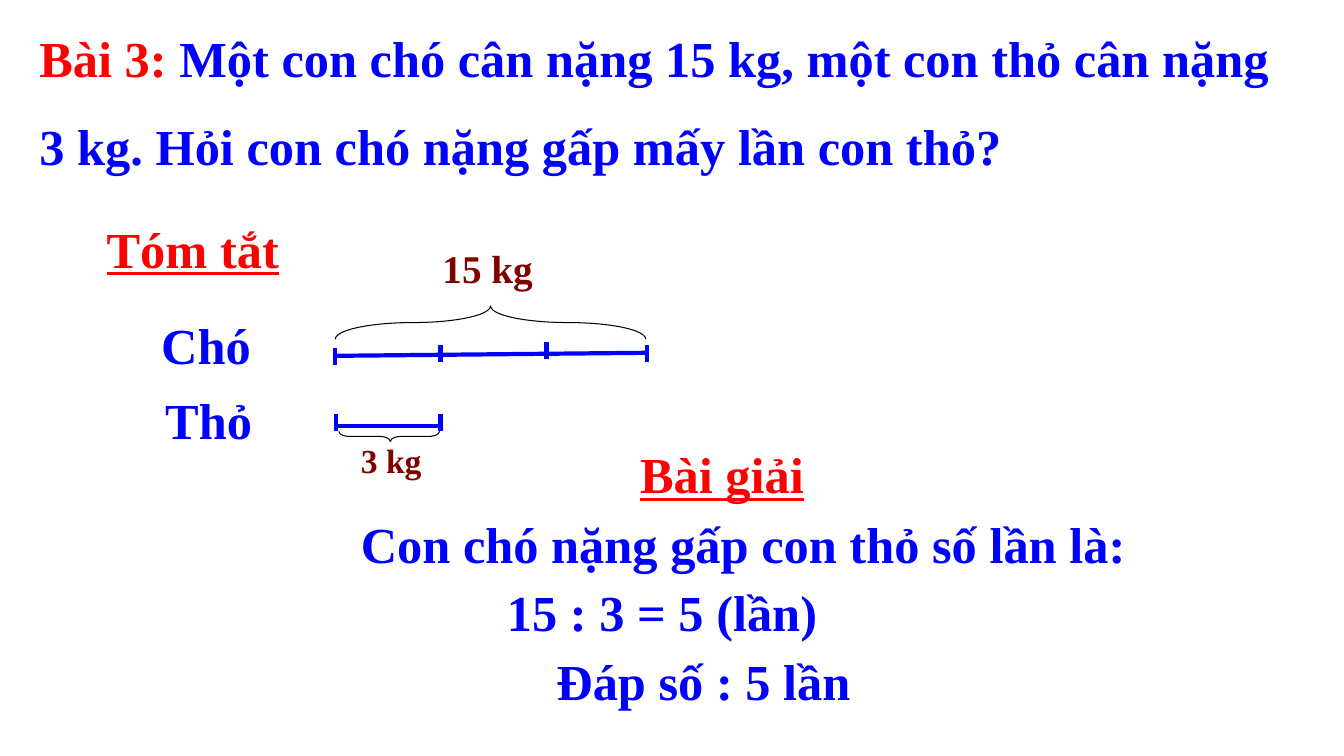
from dataclasses import dataclass
from lxml import etree
from pptx import Presentation
from pptx.dml.color import RGBColor
from pptx.enum.shapes import MSO_CONNECTOR, MSO_SHAPE
from pptx.enum.text import MSO_ANCHOR, MSO_AUTO_SIZE, PP_ALIGN
from pptx.oxml.ns import qn
from pptx.util import Inches, Pt

LINE = MSO_CONNECTOR.STRAIGHT
BRACE = MSO_SHAPE.RIGHT_BRACE
TOP = MSO_ANCHOR.TOP
FIXED = MSO_AUTO_SIZE.NONE
LEFT = PP_ALIGN.LEFT


@dataclass
class Theme:
    font: str = "Times New Roman"
    red: RGBColor = RGBColor(255, 0, 0)
    blue: RGBColor = RGBColor(0, 0, 255)
    brown: RGBColor = RGBColor(128, 0, 0)
    black: RGBColor = RGBColor(0, 0, 0)
    large: int = 36
    mid: int = 28
    small: int = 24
    gap: float = 19.5


theme = Theme()
deck = Presentation()
deck.slide_width = Inches(13.33)
deck.slide_height = Inches(7.5)
slide = deck.slides.add_slide(deck.slide_layouts[5])
shapes = slide.shapes


def style(run, color, size=theme.large, under=None):
    run.font.name = theme.font
    run.font.size = Pt(size)
    run.font.bold = True
    run.font.underline = under
    run.font.color.rgb = color


title = shapes.title
title.left, title.top = Inches(0.29), Inches(0.22)
title.width, title.height = Inches(12.92), Inches(1.62)
frame = title.text_frame
frame.word_wrap = True
frame.auto_size = FIXED
frame.vertical_anchor = TOP
frame.text = "\n".join([
    "Bài 3: ",
    "3 kg. Hỏi con chó nặng gấp mấy lần con thỏ?",
])
first, last = frame.paragraphs
first.add_run().text = "Một con chó cân nặng 15 kg, một con thỏ cân nặng"
for para in frame.paragraphs:
    para.alignment = LEFT
    para.space_before = Pt(theme.gap)
    for run in para.runs:
        style(run, theme.blue)
first.space_before = Pt(0)
first.runs[0].font.color.rgb = theme.red

labels = [
    ("Tóm tắt", 0.96, 2.11, 2, 0.71, theme.red, theme.large, True),
    ("Chó", 1.5, 3.07, 1.42, 0.71, theme.blue, theme.large, None),
    ("Thỏ", 1.54, 3.81, 1.42, 0.71, theme.blue, theme.large, None),
    ("15 kg", 4.29, 2.37, 1.25, 0.57, theme.brown, theme.mid, None),
    ("3 kg", 3.48, 4.32, 1.08, 0.5, theme.brown, theme.small, None),
    ("Bài giải", 6.25, 4.35, 1.92, 0.71, theme.red, theme.large, True),
    ("Con chó nặng gấp con thỏ số lần là:", 3.48, 5.04, 8.02, 0.71,
     theme.blue, theme.large, None),
    ("15 : 3 = 5 (lần)", 4.93, 5.72, 4.56, 0.71, theme.blue, theme.large, None),
    ("Đáp số : 5 lần", 5.42, 6.4, 3.2, 0.71, theme.blue, theme.large, None),
]
for text, x, y, wide, high, color, size, under in labels:
    box = shapes.add_textbox(Inches(x), Inches(y), Inches(wide), Inches(high))
    box.text_frame.word_wrap = True
    box.text_frame.text = text
    style(box.text_frame.paragraphs[0].runs[0], color, size, under)

bars = [(3.34, 3.53, 6.41, 3.5), (3.35, 4.23, 4.35, 4.23)]
ticks = [(3.32, 3.45), (4.37, 3.42), (5.42, 3.39), (6.42, 3.42),
         (3.33, 4.11), (4.37, 4.11)]
for x, y, right, low in bars + [(x, y, x, y + 0.17) for x, y in ticks]:
    line = shapes.add_connector(LINE, Inches(x), Inches(y), Inches(right), Inches(low))
    line.line.color.rgb = theme.blue
    line.line.width = Pt(3)
    etree.SubElement(line._element.spPr, qn("a:effectLst"))

braces = [(4.7, 1.66, 0.33, 3.08, 270, 6.917, 0.5),
          (3.81, 3.83, 0.1, 1, 90, 1.083, 0.489)]
for x, y, wide, high, turn, curve, peak in braces:
    brace = shapes.add_shape(BRACE, Inches(x), Inches(y), Inches(wide), Inches(high))
    brace.rotation = turn
    brace.adjustments[0] = curve
    brace.adjustments[1] = peak
    brace.fill.background()
    brace.line.color.rgb = theme.black
    brace.line.width = Pt(0.75)
    brace.shadow.inherit = False

deck.save("out.pptx")
